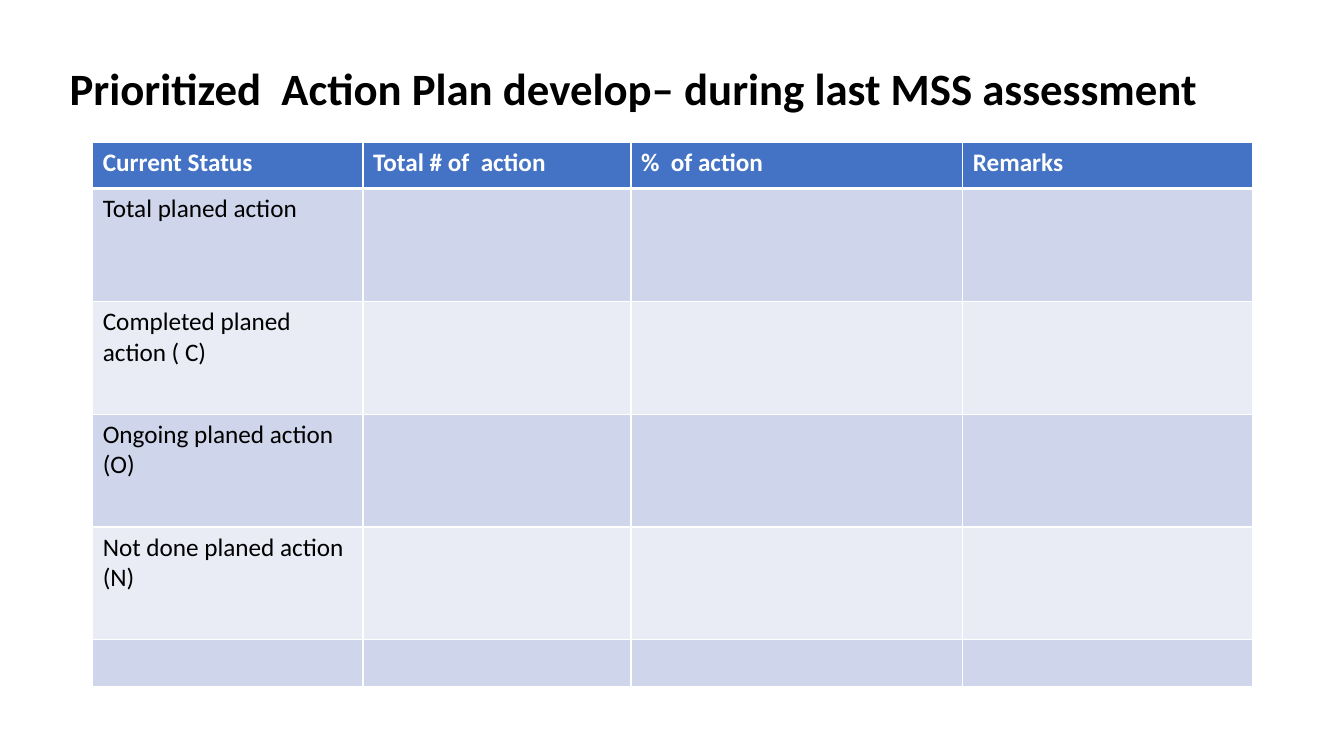
from lxml import etree
from pptx import Presentation
from pptx import util as u
from pptx.dml.color import RGBColor
from pptx.enum import text
from pptx.oxml import ns

BLACK = RGBColor(0, 0, 0)
WHITE = RGBColor(255, 255, 255)
BLUE = RGBColor(0x44, 0x72, 0xC4)
BANDS = RGBColor(0xCF, 0xD5, 0xEA), RGBColor(0xE9, 0xEB, 0xF5)

HEADS = ["Current Status", "Total # of  action", "%  of action", "Remarks"]
STATES = [
    "Total planed action",
    "Completed planed action ( C)",
    "Ongoing planed action (O)",
    "Not done planed action (N)",
    "",
]
COLS = [20.11, 19.95, 24.68, 21.6]
ROWS = [6.13] + [14.93] * 4 + [6.13]


class Deck:
    """Hold the style and current slide; lengths are percents of the slide."""

    def __init__(self):
        self.prs = Presentation()
        self.prs.slide_width = u.Inches(13.33)
        self.prs.slide_height = u.Inches(7.5)
        self.slide = self.prs.slides.add_slide(self.prs.slide_layouts[5])

    def wide(self, share):
        return round(self.prs.slide_width * share / 100)

    def high(self, share):
        return round(self.prs.slide_height * share / 100)

    def place(self, x, y, w, h):
        return self.wide(x), self.high(y), self.wide(w), self.high(h)

    def apply(self, item, style):
        for name, value in style.items():
            setattr(item, name, value)

    def label(self, para, words, size, color, bold):
        run = para.add_run()
        run.text = words
        self.apply(run.font, {"name": "Calibri", "size": u.Pt(size), "bold": bold})
        run.font.color.rgb = color

    def title(self, words, box):
        shape = self.slide.shapes.title
        names = ("left", "top", "width", "height")
        self.apply(shape, dict(zip(names, self.place(*box))))
        frame = shape.text_frame
        self.apply(frame, {
            "word_wrap": True,
            "auto_size": text.MSO_AUTO_SIZE.NONE,
            "vertical_anchor": text.MSO_ANCHOR.MIDDLE,
        })
        para = frame.paragraphs[0]
        self.apply(para, {"alignment": text.PP_ALIGN.LEFT, "line_spacing": 0.9})
        self.label(para, words, 32, BLACK, True)

    def edge(self, cell, side, points):
        props = cell._tc.get_or_add_tcPr()
        line = etree.SubElement(props, ns.qn("a:ln" + side), w=str(u.Pt(points)))
        fill = etree.SubElement(line, ns.qn("a:solidFill"))
        etree.SubElement(fill, ns.qn("a:srgbClr"), val=str(WHITE))

    def cell(self, cell, words, fill, color, bold, edges):
        for side, points in edges.items():
            self.edge(cell, side, points)
        cell.fill.solid()
        cell.fill.fore_color.rgb = fill
        if words:
            self.label(cell.text_frame.paragraphs[0], words, 18, color, bold)

    def table(self, data, x, y, cols, rows):
        box = self.place(x, y, sum(cols), sum(rows))
        grid = self.slide.shapes.add_table(len(rows), len(cols), *box).table
        for col, share in zip(grid.columns, cols):
            col.width = self.wide(share)
        for row, share in zip(grid.rows, rows):
            row.height = self.high(share)
        for r, line in enumerate(data):
            head = r == 0
            fill = BLUE if head else BANDS[(r - 1) % 2]
            color = WHITE if head else BLACK
            edges = {"L": 1, "R": 1, "T": 3 if r == 1 else 1, "B": 3 if head else 1}
            for c, words in enumerate(line):
                self.cell(grid.cell(r, c), words, fill, color, head, edges)


def main():
    deck = Deck()
    deck.title("Prioritized  Action Plan develop– during last MSS assessment",
               (4.43, 5.33, 88.75, 13.47))
    blanks = [""] * (len(HEADS) - 1)
    data = [HEADS] + [[state] + blanks for state in STATES]
    deck.table(data, 6.9, 18.8, COLS, ROWS)
    deck.prs.save("out.pptx")


if __name__ == "__main__":
    main()
